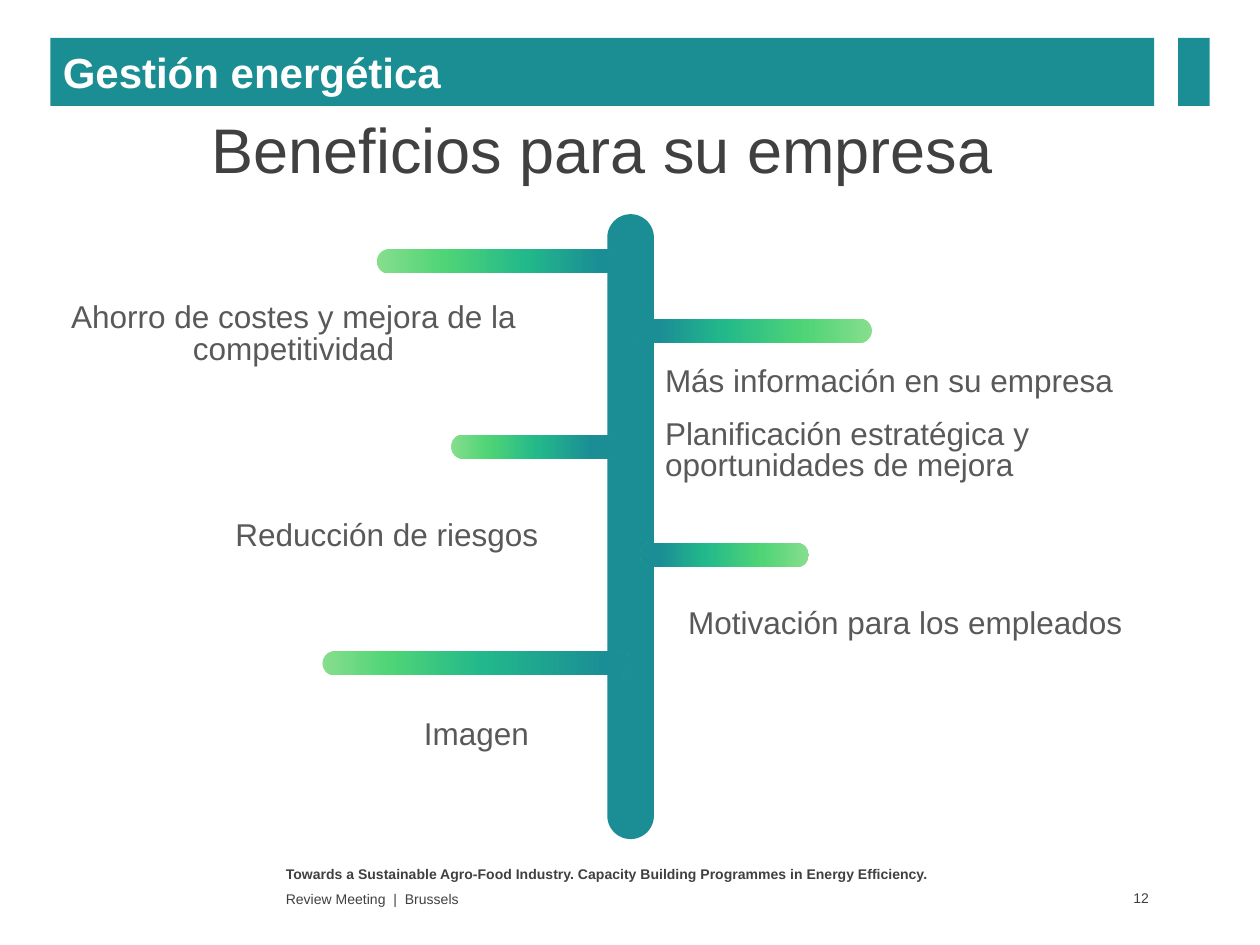
from lxml import etree
from pptx import Presentation
from pptx import util as u
from pptx.dml.color import RGBColor
from pptx.enum import shapes, text
from pptx.oxml.ns import qn

TEAL = "1B8E95"
DARK = "404040"
GREY = "595959"
BRANCH_COLOURS = ["86DE8D", "4FD476", "22B88B", TEAL]
BRANCH_HEIGHT = 0.19
LEFT, CENTRE, RIGHT = text.PP_ALIGN.LEFT, text.PP_ALIGN.CENTER, text.PP_ALIGN.RIGHT
TOP, MIDDLE = text.MSO_ANCHOR.TOP, text.MSO_ANCHOR.MIDDLE
RECTANGLE = shapes.MSO_SHAPE.RECTANGLE
ROUNDED = shapes.MSO_SHAPE.ROUNDED_RECTANGLE


def colour(hex_string):
    return RGBColor.from_string(hex_string)


def inches(box):
    return [u.Inches(length) for length in box]


def write(holder, lines, size, ink, bold=False, align=LEFT, anchor=TOP, spacing=None, after=None):
    frame = holder.text_frame
    frame.word_wrap = True
    frame.vertical_anchor = anchor
    frame.text = "\n".join(lines)
    for paragraph in frame.paragraphs:
        paragraph.alignment = align
        if spacing:
            paragraph.line_spacing = u.Pt(spacing)
        if after:
            paragraph.space_after = u.Pt(after)
        for run in paragraph.runs:
            run.font.name = "Arial"
            run.font.size = u.Pt(size)
            run.font.bold = bold
            run.font.color.rgb = colour(ink)


def add_label(slide, box, lines, size, ink, **layout):
    label = slide.shapes.add_textbox(*inches(box))
    write(label, lines, size, ink, **layout)
    return label


def add_block(slide, preset, box, fill=TEAL):
    block = slide.shapes.add_shape(preset, *inches(box))
    block.shadow.inherit = False
    block.line.fill.background()
    block.fill.solid()
    block.fill.fore_color.rgb = colour(fill)
    if preset == ROUNDED:
        block.adjustments[0] = 0.5
    return block


def add_branch(slide, left, top, width, stops, rotation=0):
    branch = add_block(slide, ROUNDED, (left, top, width, BRANCH_HEIGHT))
    branch.rotation = rotation
    branch.fill.gradient()
    branch.fill.gradient_angle = 0
    stop_list = branch._element.spPr.find(qn("a:gradFill")).find(qn("a:gsLst"))
    for old_stop in list(stop_list):
        stop_list.remove(old_stop)
    for position, hex_string in zip(stops, BRANCH_COLOURS):
        stop = etree.SubElement(stop_list, qn("a:gs"), pos=str(position * 1000))
        etree.SubElement(stop, qn("a:srgbClr"), val=hex_string)


def add_header(slide):
    banner = add_block(slide, RECTANGLE, (0.4, 0.3, 8.76, 0.54), "1B8E94")
    write(banner, ["Gestión energética"], 24, "FFFFFF", bold=True, anchor=MIDDLE)
    add_block(slide, RECTANGLE, (9.35, 0.3, 0.25, 0.54))
    add_label(slide, (0.4, 0.84, 8.76, 0.67), ["Beneficios para su empresa"], 36, DARK,
              align=CENTRE, anchor=MIDDLE)


def add_footer(slide):
    programme = "Towards a Sustainable Agro-Food Industry. Capacity Building Programmes in Energy Efficiency."
    add_label(slide, (2.17, 6.82, 5.5, 0.21), [programme], 8, DARK, bold=True)
    add_label(slide, (2.17, 7.04, 5.5, 0.19), ["Review Meeting  |  Brussels"], 8, DARK, anchor=MIDDLE)
    page_number = add_label(slide, (8.6, 7.03, 0.56, 0.2), ["12"], 8, DARK, align=RIGHT, anchor=MIDDLE)
    page_number.text_frame.margin_right = u.Inches(0.04)


def add_tree(slide):
    add_block(slide, ROUNDED, (4.82, 1.7, 0.37, 4.96))
    for left, top, width, stops, rotation in [
        (2.99, 1.98, 1.92, (0, 28, 62, 92), 0),
        (3.58, 3.45, 1.33, (0, 22, 52, 84), 0),
        (2.56, 5.17, 2.44, (0, 22, 52, 92), 0),
        (5, 2.53, 1.92, (0, 28, 62, 88), 180),
        (5.08, 4.31, 1.34, (0, 28, 62, 88), 180),
    ]:
        add_branch(slide, left, top, width, stops, rotation)


def add_benefits(slide):
    add_label(slide, (0.4, 2.36, 3.86, 0.62), ["Ahorro de costes y mejora de la competitividad"],
              18, GREY, align=CENTRE, spacing=18)
    add_label(slide, (5.18, 2.87, 4.26, 1.04),
              ["Más información en su empresa", "Planificación estratégica y oportunidades de mejora"],
              18, GREY, spacing=18, after=12)
    for benefit, box in [
        ("Reducción de riesgos", (1.69, 4.17, 2.76, 0.3)),
        ("Motivación para los empleados", (5.31, 4.87, 3.75, 0.3)),
        ("Imagen", (2.67, 5.75, 2.22, 0.3)),
    ]:
        add_label(slide, box, [benefit], 18, GREY, align=CENTRE, spacing=12)


def main():
    deck = Presentation()
    deck.slide_width, deck.slide_height = u.Inches(10), u.Inches(7.5)
    slide = deck.slides.add_slide(deck.slide_layouts[6])
    add_footer(slide)
    add_header(slide)
    add_tree(slide)
    add_benefits(slide)
    deck.save("out.pptx")


if __name__ == "__main__":
    main()
